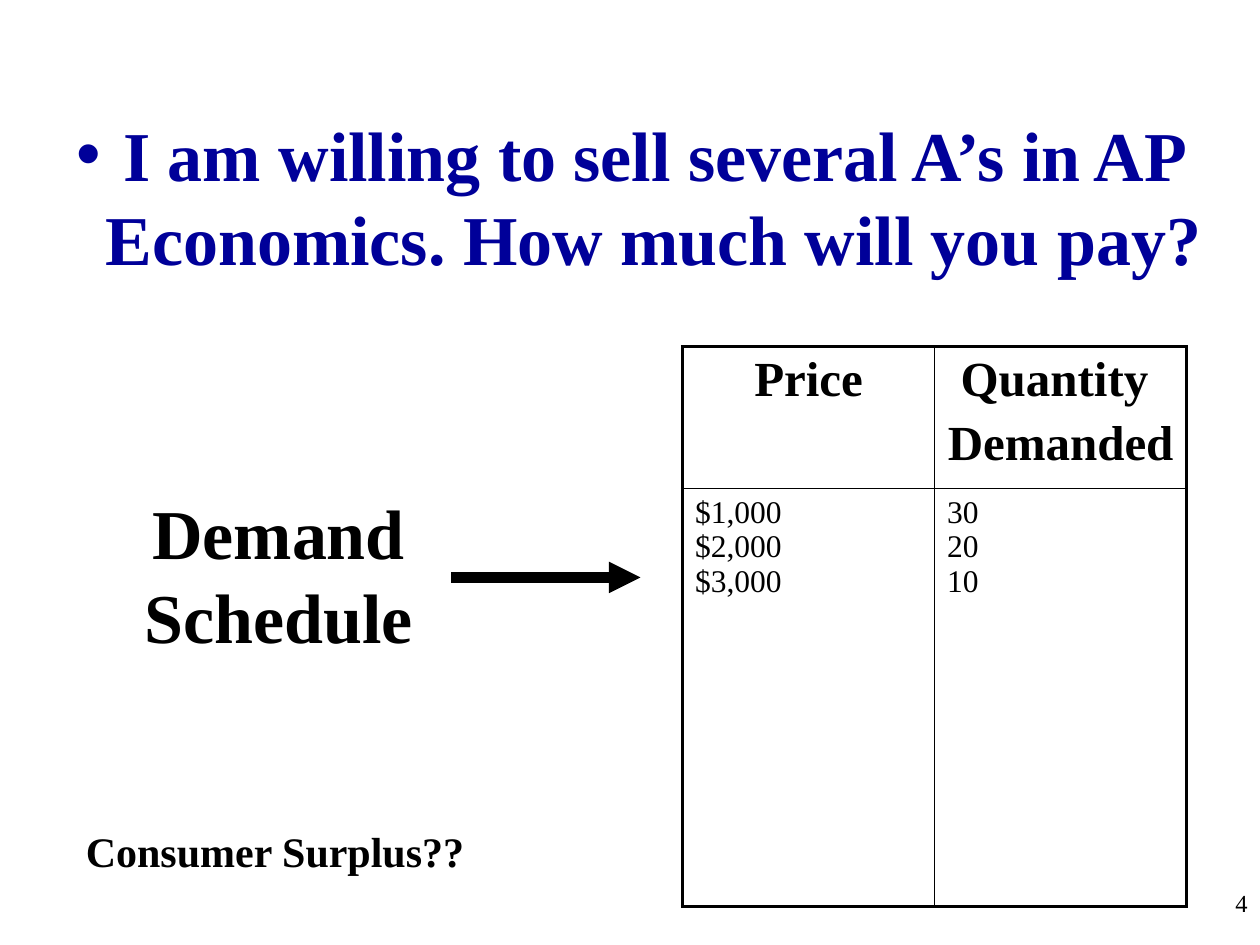
import dataclasses

import pptx
import pptx.dml.color
import pptx.enum.shapes
import pptx.enum.text
import pptx.oxml.ns
import pptx.util
from lxml import etree

Cm = pptx.util.Cm
Pt = pptx.util.Pt
Align = pptx.enum.text.PP_ALIGN


@dataclasses.dataclass(frozen=True)
class Theme:
    font: str = "Times New Roman"
    ink: str = "000000"
    heading_color: str = "000099"
    display: int = 40
    header: int = 28
    label: int = 24
    cell: int = 18
    page: int = 14
    thin: float = 1
    frame: float = 2.25
    arrow: float = 6


def add_element(parent, tag, **attributes):
    return etree.SubElement(parent, pptx.oxml.ns.qn(tag), attributes)


class SlideBuilder:
    def __init__(self, slide, theme):
        self.slide = slide
        self.theme = theme

    def fill_text(self, frame, lines, size, bold=False, align=Align.LEFT,
                  color=None, gap=0):
        """Fill a text frame with one paragraph for each line."""
        frame.word_wrap = True
        frame.text = "\n".join(lines)
        for index, paragraph in enumerate(frame.paragraphs):
            paragraph.alignment = align
            paragraph.space_before = Pt(gap if index else 0)
            font = paragraph.font
            font.name = self.theme.font
            font.size = Pt(size)
            font.bold = bold
            font.color.rgb = pptx.dml.color.RGBColor.from_string(
                color or self.theme.ink)

    def body(self, box, text):
        """Place the question, without a bullet, in the body placeholder."""
        title = self.slide.shapes.title
        title.element.getparent().remove(title.element)
        shape = self.slide.placeholders[1]
        shape.left, shape.top, shape.width, shape.height = map(Cm, box)
        frame = shape.text_frame
        properties = frame.paragraphs[0]._p.get_or_add_pPr()
        properties.set("marL", str(Cm(0.95)))
        properties.set("indent", str(-Cm(0.95)))
        add_element(properties, "a:buNone")
        self.fill_text(frame, [text], self.theme.display, True, Align.CENTER,
                       self.theme.heading_color)

    def text(self, box, text, size, bold=False, align=Align.LEFT):
        shape = self.slide.shapes.add_textbox(*map(Cm, box))
        self.fill_text(shape.text_frame, [text], size, bold, align)

    def arrow(self, start, end):
        connector = self.slide.shapes.add_connector(
            pptx.enum.shapes.MSO_CONNECTOR.STRAIGHT,
            *map(Cm, start + end))
        connector.line.width = Pt(self.theme.arrow)
        connector.line.color.rgb = pptx.dml.color.RGBColor.from_string(
            self.theme.ink)
        properties = connector._element.spPr
        line = properties.find(pptx.oxml.ns.qn("a:ln"))
        add_element(line, "a:tailEnd", type="triangle")
        add_element(properties, "a:effectLst")

    def border(self, cell, tag, width):
        line = add_element(cell._tc.get_or_add_tcPr(), tag,
                           w=str(Pt(width)))
        fill = add_element(line, "a:solidFill")
        add_element(fill, "a:srgbClr", val=self.theme.ink)

    def table(self, box, row_heights, rows):
        """Draw a table with a heavy frame, thin rules and a bold header."""
        theme = self.theme
        row_count, column_count = len(rows), len(rows[0])
        table = self.slide.shapes.add_table(
            row_count, column_count, *map(Cm, box)).table
        table.horz_banding = False
        for row, height in zip(table.rows, row_heights):
            row.height = Cm(height)
        for row_index, row in enumerate(rows):
            for column_index, lines in enumerate(row):
                cell = table.cell(row_index, column_index)
                if row_index == 0:
                    self.fill_text(cell.text_frame, lines, theme.header, True,
                                   Align.CENTER, gap=5.6)
                else:
                    self.fill_text(cell.text_frame, lines, theme.cell)
                outer_sides = {
                    "a:lnL": column_index == 0,
                    "a:lnR": column_index == column_count - 1,
                    "a:lnT": row_index == 0,
                    "a:lnB": row_index == row_count - 1,
                }
                for tag, is_outer in outer_sides.items():
                    self.border(cell, tag,
                                theme.frame if is_outer else theme.thin)
                cell.fill.background()


def main():
    presentation = pptx.Presentation()
    presentation.slide_width = Cm(25.4)
    presentation.slide_height = Cm(19.05)
    slide = presentation.slides.add_slide(presentation.slide_layouts[1])
    theme = Theme()
    builder = SlideBuilder(slide, theme)

    # Opening question
    builder.body((0, 2.12, 25.4, 11.43),
                 "I am willing to sell several A’s in AP Economics. "
                 "How much will you pay?")

    # Demand schedule table
    builder.table((13.76, 6.99, 10.16, 11.28), (2.86, 8.42), [
        [["Price"], ["Quantity ", "Demanded"]],
        [["$1,000", "$2,000", "$3,000"], ["30", "20", "10"]],
    ])

    # Label and the arrow to the table
    builder.text((2.54, 9.74, 6.15, 3.63), "Demand Schedule",
                 theme.display, True, Align.CENTER)
    builder.arrow((9.1, 11.64), (12.91, 11.64))

    # Page number and closing question
    builder.text((20.11, 17.78, 5.29, 1.27), "4", theme.page,
                 align=Align.RIGHT)
    builder.text((1.48, 16.51, 8.47, 1.3), "Consumer Surplus??",
                 theme.label, True)

    presentation.save("out.pptx")


if __name__ == "__main__":
    main()
